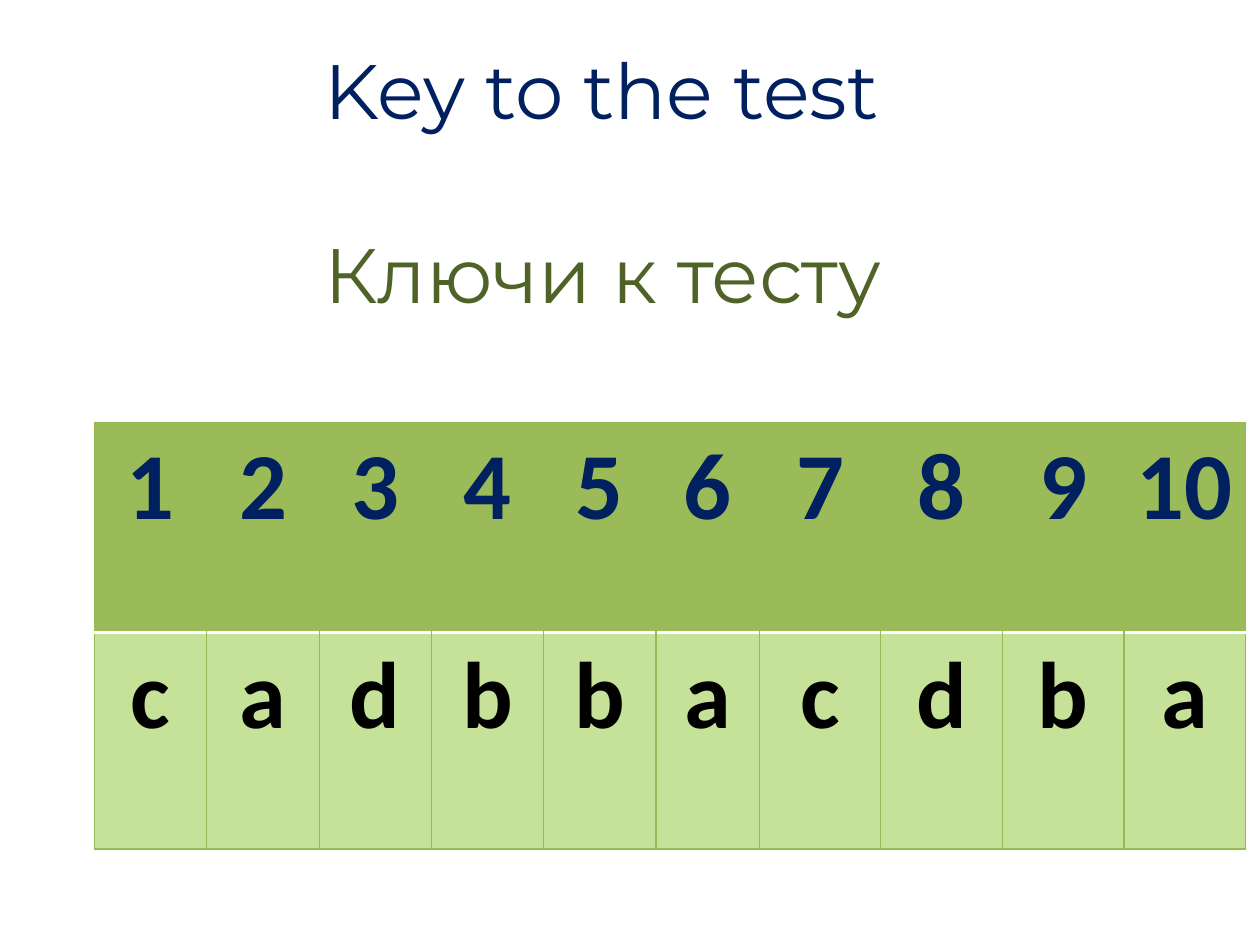
"""Builds the slide with the answer key to the test."""
from lxml.etree import SubElement
from pptx import Presentation
from pptx.dml.color import RGBColor
from pptx.enum.text import MSO_AUTO_SIZE, PP_ALIGN
from pptx.oxml.ns import qn
from pptx.util import Pt

NAVY, OLIVE, GREEN, PALE_GREEN, EDGE, WHITE, BLACK = (
    "002060", "4F6228", "9BBB59", "C6E298", "98B955", "FFFFFF", "000000")
ANSWERS = "cadbbacdba"
COLUMN_WIDTHS = [64.2] * 5 + [59] + [69.5] * 4
ROW_HEIGHTS = [119.5, 124]
THIN, RULE = (EDGE, 0.75), (WHITE, 2)


def color(value):
    return RGBColor.from_string(value)


def style_font(paragraph, name, size, value, bold=False):
    font = paragraph.font
    font.name, font.size, font.bold = name, Pt(size), bold
    font.color.rgb = color(value)


def add_titles(slide, titles):
    box = slide.shapes.add_textbox(Pt(178.5), Pt(21), Pt(376), Pt(167))
    frame = box.text_frame
    frame.word_wrap = False
    frame.auto_size = MSO_AUTO_SIZE.SHAPE_TO_FIT_TEXT
    frame.text = "\n".join(text for text, _ in titles)
    for paragraph, (_, value) in zip(frame.paragraphs, titles):
        style_font(paragraph, "Montserrat", 44, value)
    frame.paragraphs[1].space_before = Pt(52.3)


def set_border(cell, side, line):
    properties = cell._tc.get_or_add_tcPr()
    border = SubElement(properties, qn(f"a:ln{side}"))
    if line is None:
        SubElement(border, qn("a:noFill"))
        return
    value, width = line
    border.set("w", str(Pt(width)))
    fill = SubElement(border, qn("a:solidFill"))
    SubElement(fill, qn("a:srgbClr"), val=value)


def fill_cell(cell, value):
    cell.fill.solid()
    cell.fill.fore_color.rgb = color(value)


def add_answer_table(slide):
    numbers = [str(n) for n in range(1, len(ANSWERS) + 1)]
    frame = slide.shapes.add_table(
        2, len(ANSWERS), Pt(54), Pt(241.7), Pt(sum(COLUMN_WIDTHS)), Pt(sum(ROW_HEIGHTS)))
    table = frame.table
    table.first_row = table.horz_banding = False
    for column, width in zip(table.columns, COLUMN_WIDTHS):
        column.width = Pt(width)
    for row, height in zip(table.rows, ROW_HEIGHTS):
        row.height = Pt(height)

    last = len(ANSWERS) - 1
    for index, pair in enumerate(zip(numbers, ANSWERS)):
        header_borders = {"L": THIN if index == 0 else None,
                          "R": THIN if index == last else None,
                          "T": THIN, "B": RULE}
        answer_borders = {"L": THIN, "R": THIN, "T": RULE, "B": THIN}
        looks = [(NAVY, GREEN, header_borders), (BLACK, PALE_GREEN, answer_borders)]
        for row, (text, (ink, background, borders)) in enumerate(zip(pair, looks)):
            cell = table.cell(row, index)
            cell.text = text
            paragraph = cell.text_frame.paragraphs[0]
            paragraph.alignment = PP_ALIGN.CENTER
            style_font(paragraph, "Calibri", 54, ink, bold=True)
            for side, line in borders.items():
                set_border(cell, side, line)
            fill_cell(cell, background)


def main():
    presentation = Presentation()
    presentation.slide_width, presentation.slide_height = Pt(720), Pt(540)
    slide = presentation.slides.add_slide(presentation.slide_layouts[6])
    add_titles(slide, [("Key to the test", NAVY), ("Ключи к тесту", OLIVE)])
    add_answer_table(slide)
    presentation.save("out.pptx")


if __name__ == "__main__":
    main()
